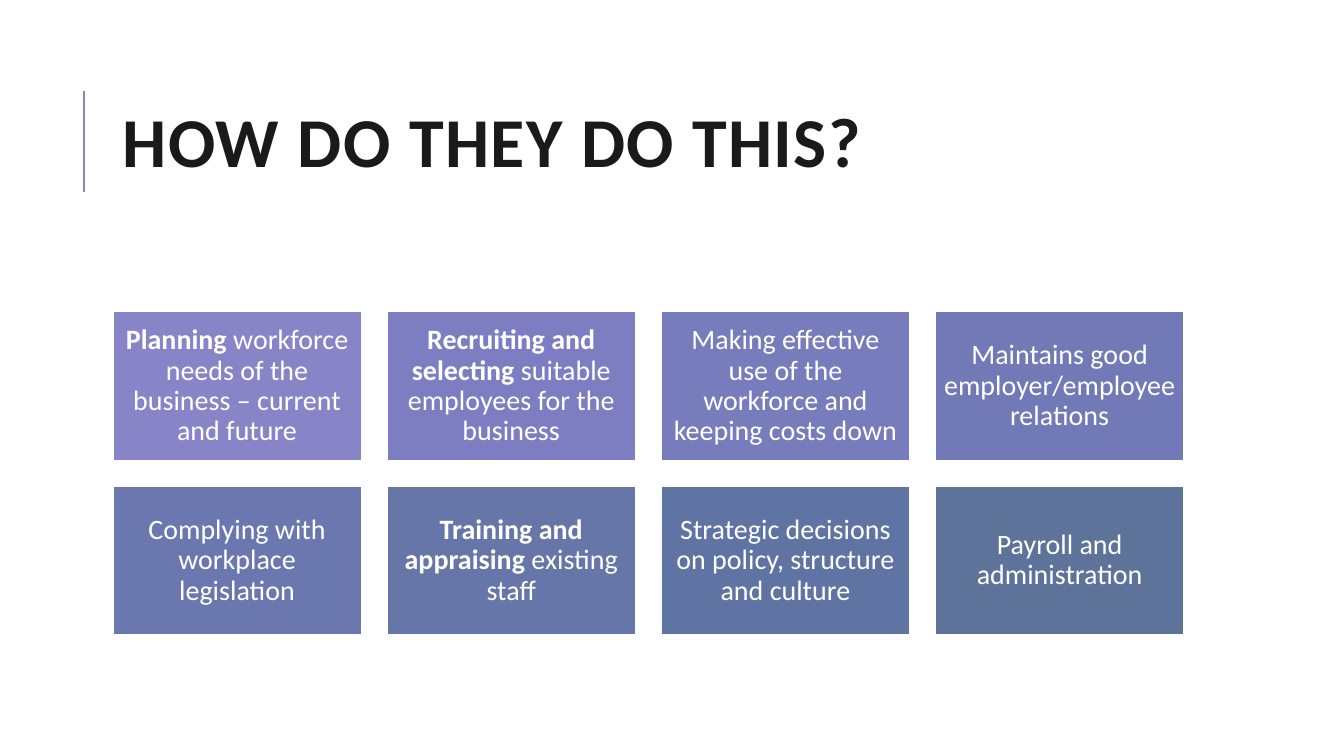
"""Build a slide with a ruled title above a grid of eight duty cards."""
import dataclasses

import pptx
import pptx.dml.color
import pptx.enum.shapes
import pptx.enum.text
import pptx.oxml.ns
import pptx.util
from lxml import etree

Cm = pptx.util.Cm
Pt = pptx.util.Pt
Rgb = pptx.dml.color.RGBColor.from_string


@dataclasses.dataclass(frozen=True)
class Theme:
    font: str = "Calibri"
    ink: str = "1A1A1A"
    white: str = "FFFFFF"
    rule: str = "8784C7"
    fills: tuple = ("8784C7", "7D7EC2", "777CBC", "717AB6",
                    "6B78B0", "6676A9", "6074A3", "5D739A")
    head: int = 50
    body: int = 20


theme = Theme()


def style(run, size, color, bold):
    run.font.name = theme.font
    run.font.size = Pt(size)
    run.font.color.rgb = Rgb(color)
    run.font.bold = bold


deck = pptx.Presentation()
deck.slide_width = Cm(33.87)
deck.slide_height = Cm(19.05)
slide = deck.slides.add_slide(deck.slide_layouts[6])

rule = slide.shapes.add_connector(
    pptx.enum.shapes.MSO_CONNECTOR.STRAIGHT, Cm(2.11), Cm(4.83), Cm(2.11), Cm(2.29))
rule.line.color.rgb = Rgb(theme.rule)
rule.line.width = Pt(1.5)
etree.SubElement(rule.element.spPr, pptx.oxml.ns.qn("a:effectLst"))

title = slide.shapes.add_textbox(Cm(2.84), Cm(1.63), Cm(27), Cm(4.17))
frame = title.text_frame
frame.word_wrap = True
frame.vertical_anchor = pptx.enum.text.MSO_ANCHOR.MIDDLE
frame.text = "HOW DO THEY DO THIS?"
para = frame.paragraphs[0]
para.line_spacing = 0.8
style(para.runs[0], theme.head, theme.ink, True)
para.runs[0]._r.get_or_add_rPr().set("spc", "100")

duties = [
    ("Planning", " workforce needs of the business – current and future"),
    ("Recruiting and selecting ", "suitable employees for the business"),
    ("", "Making effective use of the workforce and keeping costs down"),
    ("", "Maintains good employer/employee relations"),
    ("", "Complying with workplace legislation"),
    ("Training and appraising ", "existing staff"),
    ("", "Strategic decisions on policy, structure and culture"),
    ("", "Payroll and administration"),
]
cols = 4
left, top = 2.84, 7.85
wide, high = 6.27, 3.76
gap = 0.64

for i, (strong, plain) in enumerate(duties):
    row, col = divmod(i, cols)
    card = slide.shapes.add_shape(
        pptx.enum.shapes.MSO_SHAPE.RECTANGLE,
        Cm(left + col * (wide + gap)), Cm(top + row * (high + gap)),
        Cm(wide), Cm(high))
    card.shadow.inherit = False
    card.fill.solid()
    card.fill.fore_color.rgb = Rgb(theme.fills[i])
    card.line.color.rgb = Rgb(theme.white)
    card.line.width = Pt(1.25)

    frame = card.text_frame
    frame.word_wrap = True
    frame.vertical_anchor = pptx.enum.text.MSO_ANCHOR.MIDDLE
    frame.margin_left = frame.margin_right = Cm(0.2)
    frame.margin_top = frame.margin_bottom = Cm(0.2)
    para = frame.paragraphs[0]
    para.alignment = pptx.enum.text.PP_ALIGN.CENTER
    para.line_spacing = 0.9
    para.text = strong
    para.add_run().text = plain
    for run in para.runs:
        style(run, theme.body, theme.white, run.text == strong)

deck.save("out.pptx")
